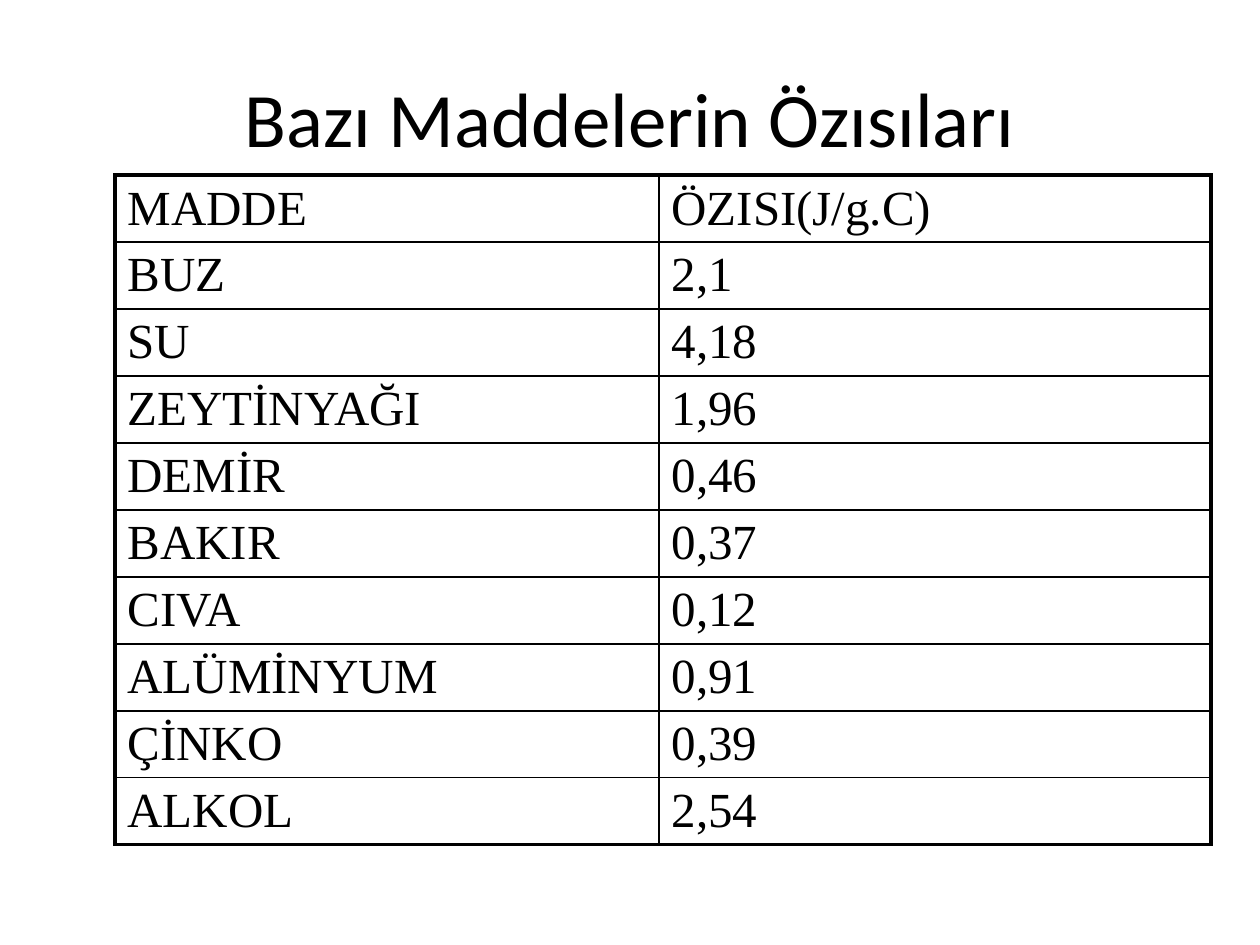
from dataclasses import dataclass

from lxml.etree import SubElement
from pptx import Presentation
from pptx.dml.color import RGBColor
from pptx.enum.text import MSO_ANCHOR, PP_ALIGN
from pptx.oxml.ns import qn
from pptx.util import Emu, Pt

EMU_PER_PX = 914400 / 126
COLORS = {"ink": "000000", "paper": "FFFFFF"}
THIN, THICK = Pt(1), Pt(2.25)
TITLE_FONT = {"name": "Calibri", "size": Pt(44)}
CELL_FONT = {"name": "Times New Roman", "size": Pt(28)}
COLUMN_WIDTHS = (544, 552)
ROW_HEIGHT = 67


@dataclass(frozen=True)
class Substance:
    name: str
    specific_heat: str


HEADER = Substance("MADDE", "ÖZISI(J/g.C)")
SUBSTANCES = [
    Substance("BUZ", "2,1"),
    Substance("SU", "4,18"),
    Substance("ZEYTİNYAĞI", "1,96"),
    Substance("DEMİR", "0,46"),
    Substance("BAKIR", "0,37"),
    Substance("CIVA", "0,12"),
    Substance("ALÜMİNYUM", "0,91"),
    Substance("ÇİNKO", "0,39"),
    Substance("ALKOL", "2,54"),
]


def px(length: int) -> Emu:
    return Emu(round(length * EMU_PER_PX))


def write(paragraph, text: str, font_format: dict) -> None:
    run = paragraph.add_run()
    run.text = text
    for attribute, value in font_format.items():
        setattr(run.font, attribute, value)
    run.font.color.rgb = RGBColor.from_string(COLORS["ink"])


def add_title(slide, text: str) -> None:
    frame = slide.shapes.add_textbox(px(63), px(38), px(1134), px(157)).text_frame
    for attribute, value in {"word_wrap": True, "vertical_anchor": MSO_ANCHOR.MIDDLE}.items():
        setattr(frame, attribute, value)
    paragraph = frame.paragraphs[0]
    paragraph.alignment = PP_ALIGN.CENTER
    write(paragraph, text, TITLE_FONT)


def set_borders(cell, widths: dict[str, int]) -> None:
    """Draw the cell's sides; call before the fill, which must follow them in the XML."""
    properties = cell._tc.get_or_add_tcPr()
    for side, width in widths.items():
        line = SubElement(properties, qn(f"a:{side}"), w=str(int(width)))
        fill = SubElement(line, qn("a:solidFill"))
        SubElement(fill, qn("a:srgbClr"), val=COLORS["ink"])


def set_space_before(paragraph, percent: int) -> None:
    spacing = SubElement(paragraph._p.get_or_add_pPr(), qn("a:spcBef"))
    SubElement(spacing, qn("a:spcPct"), val=str(percent * 1000))


def add_heat_table(slide, entries: list[Substance]) -> None:
    last_row, last_column = len(entries) - 1, len(COLUMN_WIDTHS) - 1
    table = slide.shapes.add_table(
        len(entries), len(COLUMN_WIDTHS), px(115), px(175),
        px(sum(COLUMN_WIDTHS)), px(ROW_HEIGHT * len(entries)),
    ).table
    for column, width in zip(table.columns, COLUMN_WIDTHS):
        column.width = px(width)
    for r, entry in enumerate(entries):
        table.rows[r].height = px(ROW_HEIGHT)
        for c, text in enumerate((entry.name, entry.specific_heat)):
            cell = table.cell(r, c)
            outer = {"lnL": c == 0, "lnR": c == last_column, "lnT": r == 0, "lnB": r == last_row}
            set_borders(cell, {side: THICK if edge else THIN for side, edge in outer.items()})
            cell.fill.solid()
            cell.fill.fore_color.rgb = RGBColor.from_string(COLORS["paper"])
            paragraph = cell.text_frame.paragraphs[0]
            set_space_before(paragraph, 20)
            write(paragraph, text, CELL_FONT)


def main() -> None:
    presentation = Presentation()
    presentation.slide_width, presentation.slide_height = px(1260), px(945)
    slide = presentation.slides.add_slide(presentation.slide_layouts[6])
    add_heat_table(slide, [HEADER, *SUBSTANCES])
    add_title(slide, "Bazı Maddelerin Özısıları")
    presentation.save("out.pptx")


if __name__ == "__main__":
    main()
